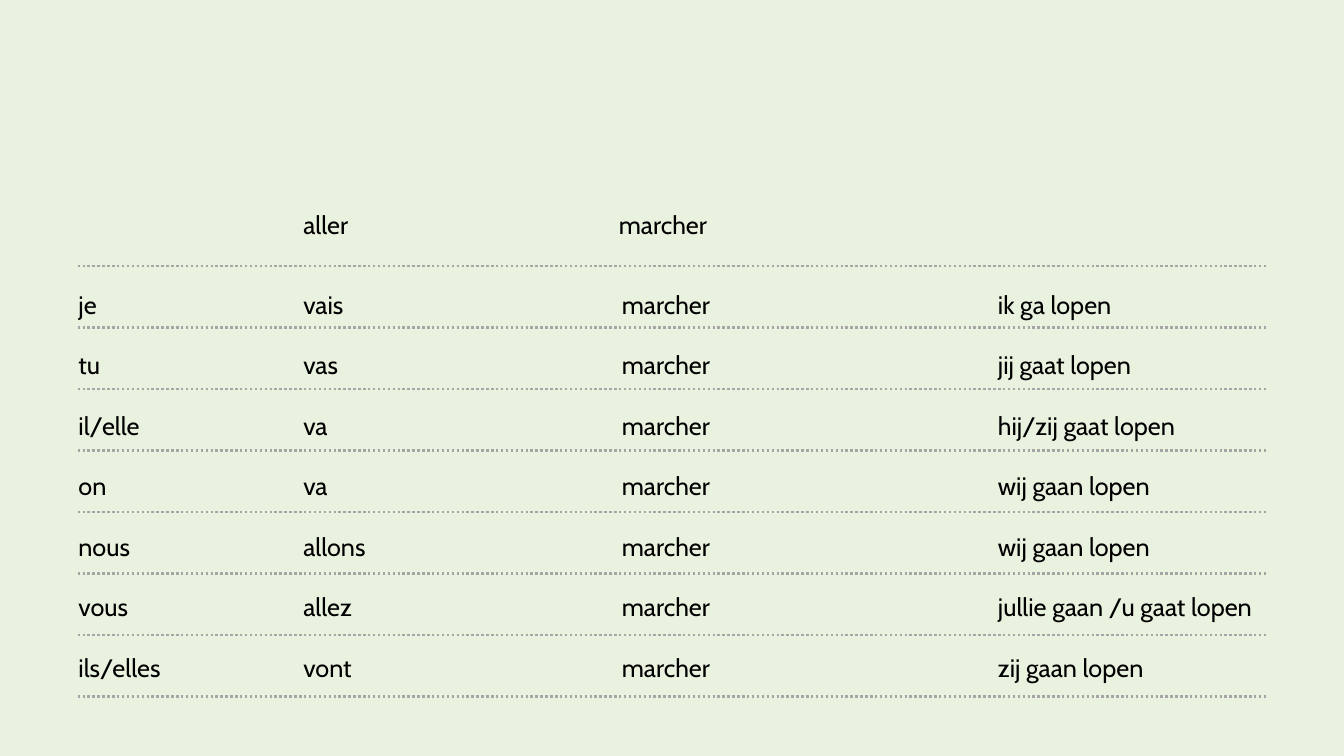
from lxml import etree
from pptx import Presentation
from pptx.dml.color import RGBColor
from pptx.enum import dml, shapes
from pptx.oxml.ns import qn
from pptx.util import Inches, Pt

BACKGROUND = RGBColor(0xE9, 0xF1, 0xDF)
TEXT = RGBColor(0x00, 0x00, 0x00)
RULE = RGBColor(0xA5, 0xA5, 0xA5)
FONT = "Cabin"

presentation = Presentation()
presentation.slide_width = Inches(13.33)
presentation.slide_height = Inches(7.5)
slide = presentation.slides.add_slide(presentation.slide_layouts[6])
slide.background.fill.solid()
slide.background.fill.fore_color.rgb = BACKGROUND


def add_text(lines, left, top, width, height, line_spacing):
    box = slide.shapes.add_textbox(Inches(left), Inches(top), Inches(width), Inches(height))
    box.text_frame.word_wrap = True
    box.text_frame.text = "\n".join(lines)
    for paragraph in box.text_frame.paragraphs:
        paragraph.line_spacing = line_spacing
        for run in paragraph.runs:
            run.font.name = FONT
            run.font.size = Pt(18)
            run.font.color.rgb = TEXT


# Column headings
add_text(["aller"], 2.91, 2.03, 2.5, 0.4, 1.0)
add_text(["marcher"], 6.04, 2.03, 3.13, 0.4, 1.0)

# Conjugation columns: left, width, entries
pronouns = ["je", "tu", "il/elle", "on", "nous", "vous", "ils/elles"]
verb_forms = ["vais", "vas", "va", "va", "allons", "allez", "vont"]
infinitives = ["marcher"] * len(pronouns)
translations = [
    "ik ga lopen",
    "jij gaat lopen",
    "hij/zij gaat lopen",
    "wij gaan lopen",
    "wij gaan lopen",
    "jullie gaan /u gaat lopen",
    "zij gaan lopen",
]
columns = [
    (0.68, 2.1, pronouns),
    (2.91, 3.1, verb_forms),
    (6.07, 3.1, infinitives),
    (9.8, 3.1, translations),
]
for left, width, entries in columns:
    add_text(entries, left, 2.52, width, 4.25, 2.0)

# Dotted rules: one under the headings and one under each row
for row in range(len(pronouns) + 1):
    y = Inches(2.64 + 0.61 * row)
    rule = slide.shapes.add_connector(
        shapes.MSO_CONNECTOR.STRAIGHT, Inches(0.77), y, Inches(12.58), y
    )
    rule.line.color.rgb = RULE
    rule.line.width = Pt(1.75)
    rule.line.dash_style = dml.MSO_LINE.ROUND_DOT
    etree.SubElement(rule._element.spPr, qn("a:effectLst"))

presentation.save("out.pptx")
